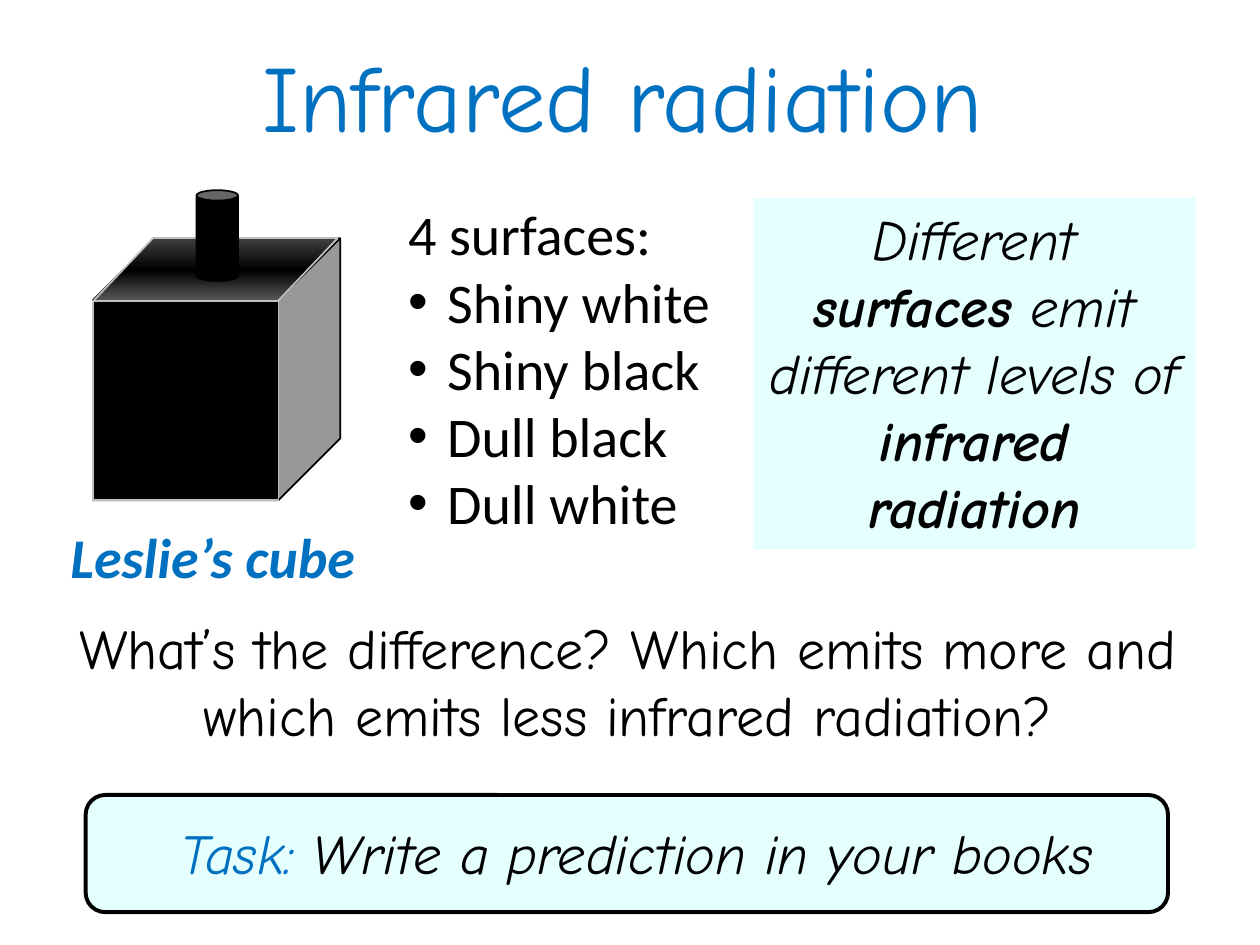
from copy import deepcopy

from pptx import Presentation, util as u
from pptx.dml.color import RGBColor
from pptx.enum import shapes, text
from pptx.oxml.ns import qn
from lxml import etree

HUES = {"blue": "0070C0", "ice": "E5FFFF", "ink": "000000", "grey": "BFBFBF",
        "dark": "404040", "slate": "595959"}
KIND = shapes.MSO_SHAPE
ALIGN, ANCHOR = text.PP_ALIGN, text.MSO_ANCHOR
COMIC, PLAIN = "Comic Neue", "Calibri"
COLS, ROWS = 100, 75


def hue(name):
    return RGBColor.from_string(HUES[name])


class Board:
    """Holds the style and the slide; boxes are (column, row, columns, rows)."""

    def __init__(self, deck):
        self.cell = (deck.slide_width / COLS, deck.slide_height / ROWS)
        self.slide = deck.slides.add_slide(deck.slide_layouts[5])
        self.base = {"name": COMIC, "size": u.Pt(32), "bold": False, "italic": False}

    def place(self, box):
        return [u.Emu(round(n * self.cell[i % 2])) for i, n in enumerate(box)]

    def letter(self, shape, paras, align=ALIGN.CENTER, anchor=ANCHOR.TOP, wrap=True, **style):
        """Fill a shape with paragraphs, each a list of (words, format) runs."""
        frame = shape.text_frame
        frame.word_wrap, frame.vertical_anchor = wrap, anchor
        frame.auto_size = text.MSO_AUTO_SIZE.NONE
        for i, runs in enumerate(paras):
            para = frame.add_paragraph() if i else frame.paragraphs[0]
            para.alignment = align
            for words, own in runs:
                run = para.add_run()
                run.text = words
                look = {**self.base, "color": "ink", **style, **own}
                run.font.color.rgb = hue(look.pop("color"))
                for key, value in look.items():
                    setattr(run.font, key, value)
        return frame

    def title(self, box, words, **style):
        shape = self.slide.shapes.title
        shape.left, shape.top, shape.width, shape.height = self.place(box)
        self.letter(shape, [[(words, {})]], anchor=ANCHOR.MIDDLE, **style)

    def label(self, box, paras, **style):
        return self.letter(self.slide.shapes.add_textbox(*self.place(box)), paras, **style)

    def shape(self, kind, box, fill, line=None, width=1):
        item = self.slide.shapes.add_shape(kind, *self.place(box))
        item.shadow.inherit = False
        item.fill.solid()
        item.fill.fore_color.rgb = hue(fill)
        if line:
            item.line.color.rgb = hue(line)
            item.line.width = u.Pt(width)
        else:
            item.line.fill.background()
        return item

    def blend(self, item, stops):
        """Give a shape a top-to-bottom gradient of (share, colour) stops."""
        item.fill.gradient()
        item.fill.gradient_angle = 270
        track = item._element.spPr.find(qn("a:gradFill")).find(qn("a:gsLst"))
        while len(track) < len(stops):
            track.append(deepcopy(track[0]))
        for stop, (share, name) in zip(item.fill.gradient_stops, stops):
            stop.position, stop.color.rgb = share, hue(name)

    def bullet(self, para, indent):
        props = para._p.get_or_add_pPr()
        props.set("marL", str(indent))
        props.set("indent", str(-indent))
        etree.SubElement(props, qn("a:buFont")).set("typeface", "Arial")
        etree.SubElement(props, qn("a:buChar")).set("char", "•")


def main():
    deck = Presentation()
    deck.slide_width, deck.slide_height = u.Inches(10), u.Inches(7.5)
    board = Board(deck)
    board.title((4.9, 2.5, 89, 10.1), "Infrared radiation", size=u.Pt(54), color="blue")

    # Leslie's cube
    left, top, side, mid = 7.4, 18.9, 14.7, 23.9
    board.shape(KIND.CUBE, (left, top, 19.6, 20.8), "grey", "ink")
    board.shape(KIND.RECTANGLE, (left, mid, side, 15.8), "ink", "grey")
    lid = board.shape(KIND.PARALLELOGRAM, (left, top, 19.4, mid - top), "ink", "grey")
    lid.adjustments[0] = 0.95
    board.blend(lid, [(0, "dark"), (0.51, "ink"), (1, "slate")])
    board.shape(KIND.CAN, (15.6, 15.1, 3.3, 7.2), "ink", "ink")
    board.label((3.1, 41, 27.6, 6.4), [[("Leslie’s cube", {})]],
                name=PLAIN, color="blue", bold=True, italic=True)

    # Surfaces and the fact beside them
    lines = ["4 surfaces:", "Shiny white", "Shiny black", "Dull black", "Dull white"]
    frame = board.label((31.4, 15.4, 27.2, 27.6), [[(line, {})] for line in lines],
                        name=PLAIN, align=ALIGN.LEFT, anchor=ANCHOR.MIDDLE)
    for para in frame.paragraphs[1:]:
        board.bullet(para, u.Inches(0.31))
    strong = {"bold": True}
    fact = board.shape(KIND.RECTANGLE, (59.8, 15.7, 35.1, 27.9), "ice")
    board.letter(fact, [[("Different ", {}), ("surfaces", strong),
                         (" emit different levels of ", {}),
                         ("infrared radiation", strong)]], italic=True)

    # Question and task
    board.label((2.9, 48.2, 93.9, 11.8), [[(
        "What’s the difference? Which emits more and which emits less infrared radiation?", {})]])
    board.shape(KIND.ROUNDED_RECTANGLE, (6.8, 63.1, 85.9, 9.3), "ice", "ink", 2.25)
    board.label((9.3, 64.5, 82.5, 6.4), [[("Task: ", {"color": "blue"}),
                ("Write a prediction in your books", {})]], wrap=False, italic=True)
    deck.save("out.pptx")


if __name__ == "__main__":
    main()
